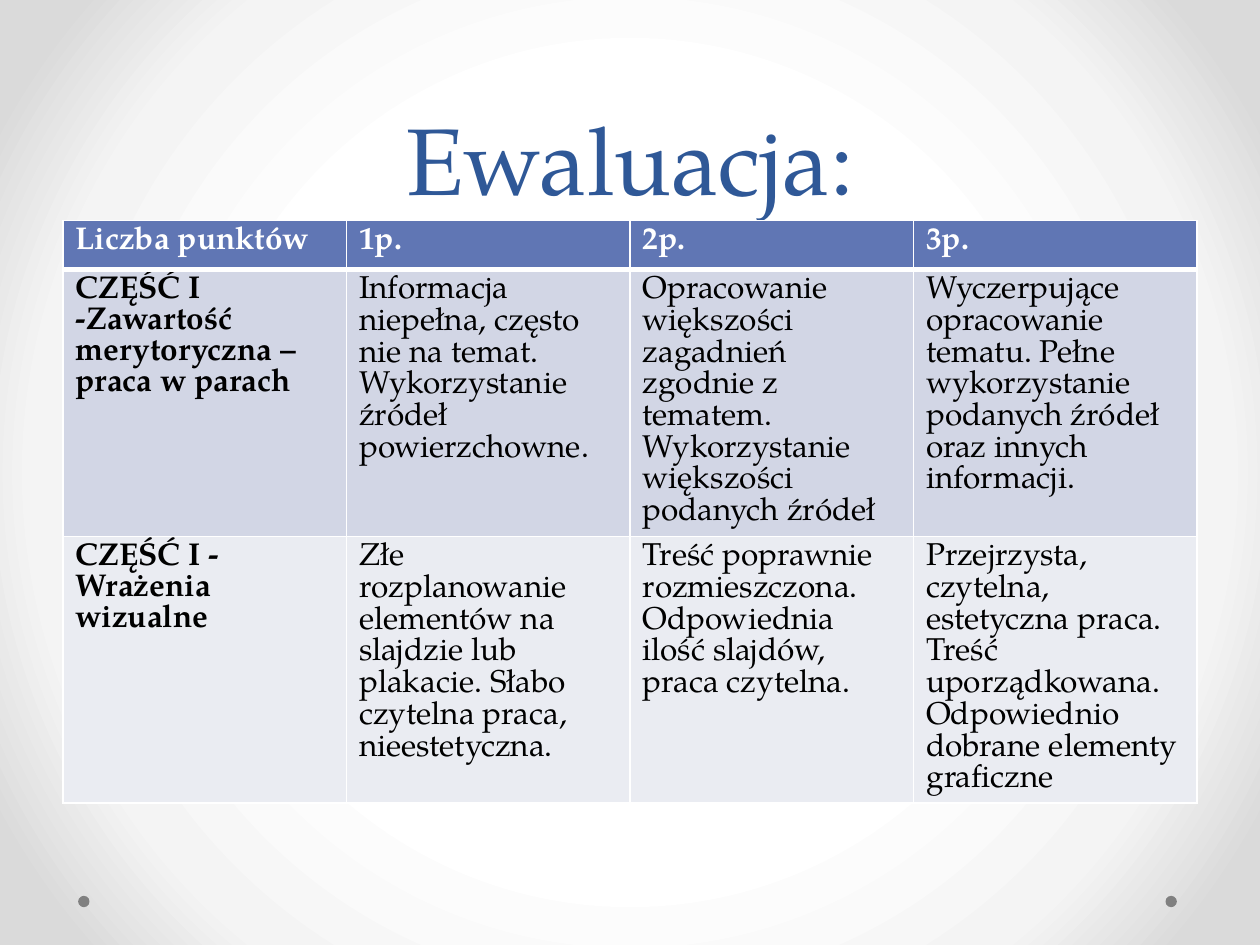
import pptx
import pptx.dml.color
import pptx.enum.shapes
import pptx.enum.text
import pptx.oxml
import pptx.oxml.ns
import pptx.util

Inches, Pt = pptx.util.Inches, pptx.util.Pt
FONT = "TeX Gyre Pagella"
COLORS = {
    "title": "2F5897", "header": "6076B4", "band_dark": "D2D6E5",
    "band_light": "EAECF2", "white": "FFFFFF", "black": "000000", "dot": "808080",
}
BACKGROUND_STOPS = [(50, "FFFFFF"), (76, "F4F4F4"), (92, "DADADA")]
ROW_HEIGHTS = [0.39, 2.12, 2.11]
ROW_FILLS = ["header", "band_dark", "band_light"]
ROWS = [
    ["Liczba punktów", "1p.", "2p.", "3p."],
    [
        "CZĘŚĆ I -Zawartość merytoryczna –\npraca w parach",
        "Informacja niepełna, często nie na temat. Wykorzystanie źródeł powierzchowne.",
        "Opracowanie większości zagadnień zgodnie z tematem. "
        "Wykorzystanie większości podanych źródeł",
        "Wyczerpujące opracowanie tematu. Pełne wykorzystanie podanych źródeł "
        "oraz innych informacji.",
    ],
    [
        "CZĘŚĆ I -\nWrażenia wizualne",
        "Złe rozplanowanie elementów na slajdzie lub plakacie. "
        "Słabo czytelna praca, nieestetyczna.",
        "Treść poprawnie rozmieszczona. Odpowiednia ilość slajdów, praca czytelna.",
        "Przejrzysta, czytelna, estetyczna praca. Treść uporządkowana. "
        "Odpowiednio dobrane elementy graficzne",
    ],
]


def rgb(name):
    return pptx.dml.color.RGBColor.from_string(COLORS[name])


def style_font(p, size, color, bold=False):
    p.font.name = FONT
    p.font.size = Pt(size)
    p.font.bold = bold
    p.font.color.rgb = rgb(color)


def set_background(slide):
    """Radial gradient, spreading from the centre of the slide."""
    stops = "".join(
        f'<a:gs pos="{pos * 1000}"><a:srgbClr val="{color}"/></a:gs>'
        for pos, color in BACKGROUND_STOPS
    )
    bg = pptx.oxml.parse_xml(
        f'<p:bg {pptx.oxml.ns.nsdecls("p", "a")}><p:bgPr><a:gradFill rotWithShape="1">'
        f'<a:gsLst>{stops}</a:gsLst><a:path path="circle">'
        '<a:fillToRect l="50000" t="50000" r="50000" b="50000"/></a:path>'
        "</a:gradFill><a:effectLst/></p:bgPr></p:bg>"
    )
    slide.element.cSld.insert(0, bg)


def add_dot(slide, left):
    sp = slide.shapes.add_shape(
        pptx.enum.shapes.MSO_SHAPE.OVAL,
        Inches(left), Inches(7.11), Inches(0.09), Inches(0.09),
    )
    sp.shadow.inherit = False
    sp.fill.solid()
    sp.fill.fore_color.rgb = rgb("dot")
    sp.line.fill.background()


def set_title(slide, text):
    sp = slide.shapes.title
    sp.left, sp.top, sp.width, sp.height = (Inches(v) for v in (0.5, 0, 9, 1.75))
    tf = sp.text_frame
    tf.text = text
    tf.auto_size = pptx.enum.text.MSO_AUTO_SIZE.NONE
    tf.vertical_anchor = pptx.enum.text.MSO_ANCHOR.BOTTOM
    p = tf.paragraphs[0]
    p.alignment = pptx.enum.text.PP_ALIGN.CENTER
    p.line_spacing = Pt(58)
    style_font(p, 54, "title")


def set_borders(cell, top, bottom):
    """White lines: 1 pt at the sides, the given widths above and below."""
    tcPr = cell._tc.get_or_add_tcPr()
    for i, (side, width) in enumerate(zip("LRTB", (1, 1, top, bottom))):
        tcPr.insert(i, pptx.oxml.parse_xml(
            f'<a:ln{side} {pptx.oxml.ns.nsdecls("a")} w="{Pt(width)}"><a:solidFill>'
            f'<a:srgbClr val="{COLORS["white"]}"/></a:solidFill></a:ln{side}>'
        ))


def fill_cell(cell, text, row, col):
    cell.text = text
    for p in cell.text_frame.paragraphs:
        style_font(p, 18, "black" if row else "white", bold=row == 0 or col == 0)
    cell.fill.solid()
    cell.fill.fore_color.rgb = rgb(ROW_FILLS[row])
    set_borders(cell, top=3 if row == 1 else 1, bottom=3 if row == 0 else 1)


def add_criteria_table(slide):
    table = slide.shapes.add_table(
        len(ROWS), len(ROWS[0]),
        Inches(0.5), Inches(1.75), Inches(9), Inches(sum(ROW_HEIGHTS)),
    ).table
    for row, texts in enumerate(ROWS):
        table.rows[row].height = Inches(ROW_HEIGHTS[row])
        for col, text in enumerate(texts):
            fill_cell(table.cell(row, col), text, row, col)


def main():
    prs = pptx.Presentation()
    prs.slide_width, prs.slide_height = Inches(10), Inches(7.5)
    slide = prs.slides.add_slide(prs.slide_layouts[5])
    set_background(slide)
    for left in (9.25, 0.62):
        add_dot(slide, left)
    set_title(slide, "Ewaluacja:")
    add_criteria_table(slide)
    prs.save("out.pptx")


if __name__ == "__main__":
    main()
